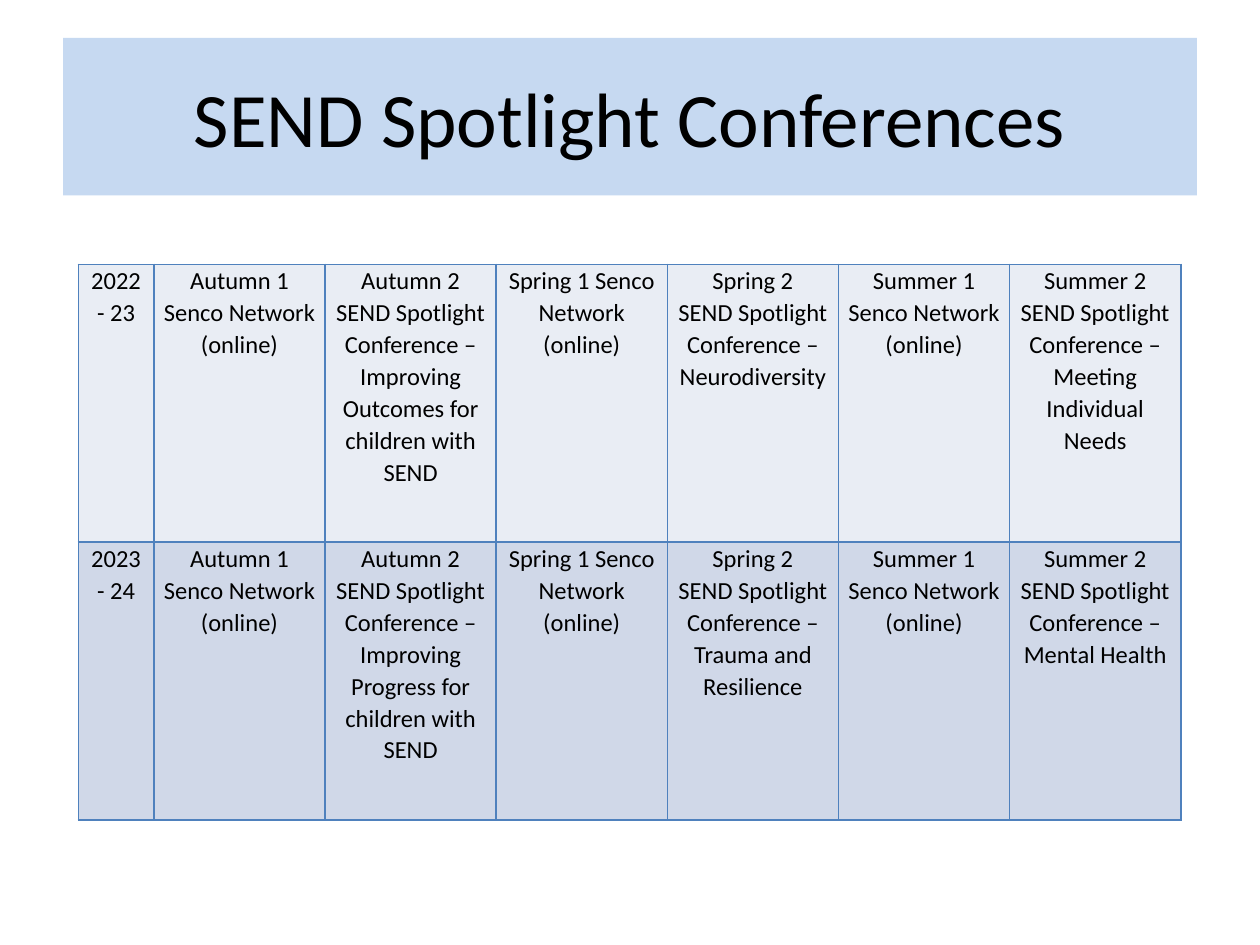
from pptx import Presentation
from pptx.dml.color import RGBColor
from pptx.enum.text import MSO_ANCHOR, PP_ALIGN
from pptx.oxml.ns import qn
from pptx.util import Pt
from lxml.etree import SubElement

BLACK = RGBColor(0x00, 0x00, 0x00)
TITLE_BLUE = RGBColor(0xC6, 0xD9, 0xF1)
BORDER_BLUE = RGBColor(0x4F, 0x81, 0xBD)
YEAR_FILLS = [RGBColor(0xE9, 0xED, 0xF4), RGBColor(0xD0, 0xD8, 0xE8)]

NETWORK = "Senco Network"
CONFERENCE = "SEND Spotlight Conference – "
YEARS = [
    ("2022 - 23", "Improving Outcomes for children with SEND",
     "Neurodiversity", "Meeting Individual Needs"),
    ("2023 - 24", "Improving Progress for children with SEND",
     "Trauma and Resilience", "Mental Health"),
]


def write_text(frame, text, size, spacing=None):
    """Write centred text, one paragraph for each line."""
    frame.text = text
    for paragraph in frame.paragraphs:
        paragraph.alignment = PP_ALIGN.CENTER
        paragraph.space_before = paragraph.space_after = Pt(0)
        if spacing:
            paragraph.line_spacing = spacing
        for run in paragraph.runs:
            run.font.size = Pt(size)
            run.font.name = "Calibri"
            run.font.color.rgb = BLACK


def add_borders(cell, color, width):
    properties = cell._tc.get_or_add_tcPr()
    for side in ("a:lnL", "a:lnR", "a:lnT", "a:lnB"):
        line = SubElement(properties, qn(side), w=str(Pt(width)))
        SubElement(SubElement(line, qn("a:solidFill")), qn("a:srgbClr"), val=str(color))


prs = Presentation()
prs.slide_width, prs.slide_height = Pt(720), Pt(540)
slide = prs.slides.add_slide(prs.slide_layouts[5])

# Title band
title = slide.shapes.title
title.left, title.top, title.width, title.height = Pt(36), Pt(21.6), Pt(648), Pt(90)
title.fill.solid()
title.fill.fore_color.rgb = TITLE_BLUE
title.text_frame.vertical_anchor = MSO_ANCHOR.MIDDLE
write_text(title.text_frame, "SEND Spotlight Conferences", size=44)

# Two years of events, one column per half term
schedule = slide.shapes.add_table(
    len(YEARS), 7, Pt(44.75), Pt(151), Pt(630), Pt(317.6)).table
schedule.first_row = False
schedule.horz_banding = False
for index, column in enumerate(schedule.columns):
    column.width = Pt(97.8 if index else 43.2)

for row, (year, autumn, spring, summer), fill in zip(schedule.rows, YEARS, YEAR_FILLS):
    row.height = Pt(158.8)
    events = [
        year,
        f"Autumn 1 {NETWORK} (online)",
        f"Autumn 2\n{CONFERENCE}{autumn}",
        f"Spring 1 {NETWORK}\n(online)",
        f"Spring 2\n{CONFERENCE}{spring}",
        f"Summer 1 {NETWORK}\n(online)",
        f"Summer 2\n{CONFERENCE}{summer}",
    ]
    for cell, event in zip(row.cells, events):
        cell.margin_left = cell.margin_right = Pt(5)
        cell.margin_top = cell.margin_bottom = Pt(0)
        add_borders(cell, BORDER_BLUE, width=1)
        cell.fill.solid()
        cell.fill.fore_color.rgb = fill
        write_text(cell.text_frame, event, size=14, spacing=1.07)

prs.save("out.pptx")
